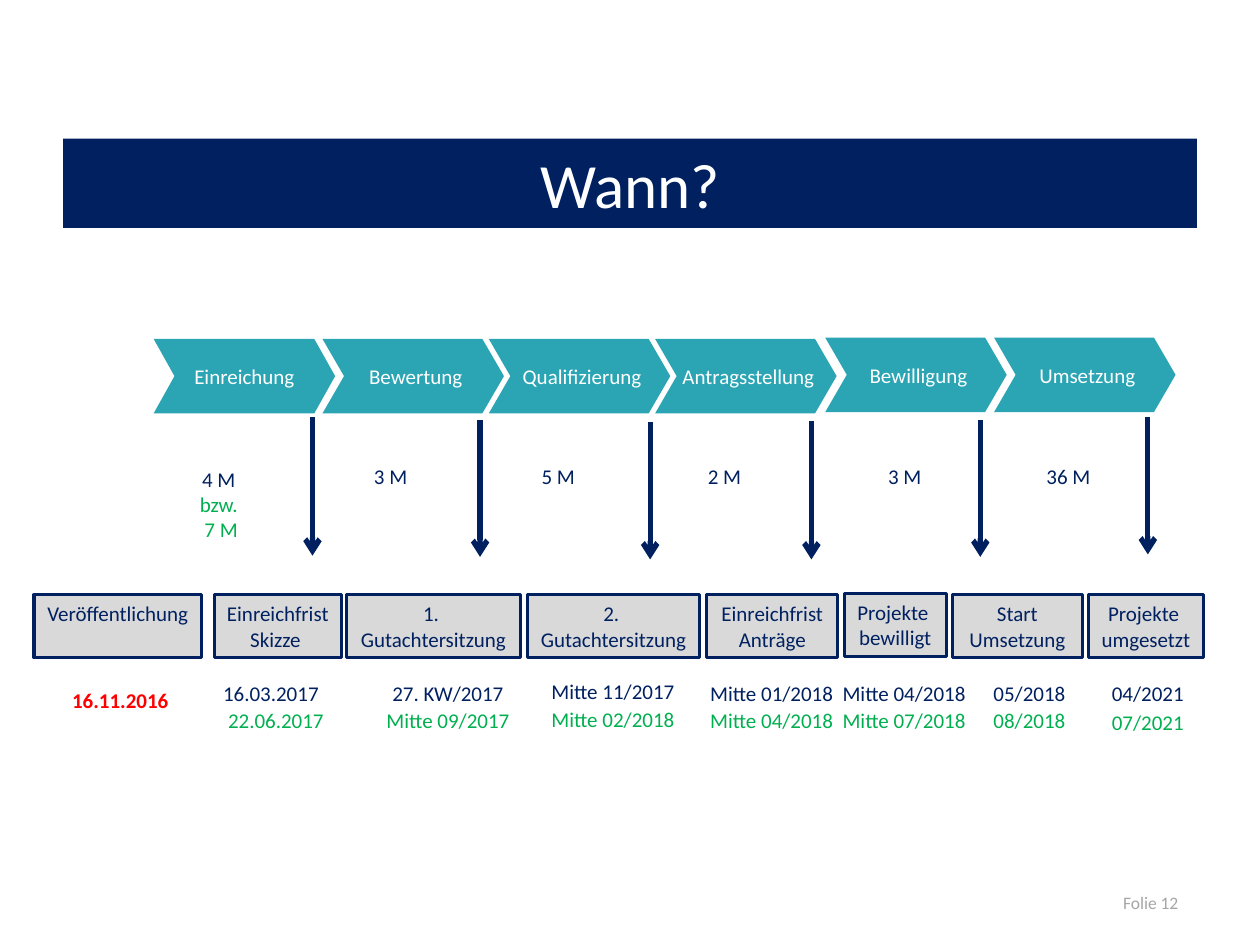
from dataclasses import dataclass

from lxml.etree import SubElement
from pptx import Presentation
from pptx.dml.color import RGBColor
from pptx.enum.shapes import MSO_CONNECTOR as Conn, MSO_SHAPE as Shape
from pptx.enum.text import MSO_ANCHOR as Anchor, PP_ALIGN as Align
from pptx.oxml.ns import qn
from pptx.util import Pt

EMU_PER_PX = 9144
FONT = "Calibri"
NAVY = RGBColor(0x00, 0x20, 0x60)
TEAL = RGBColor(0x2B, 0xA4, 0xB4)
GREEN = RGBColor(0x00, 0xB0, 0x50)
RED = RGBColor(0xFF, 0x00, 0x00)
WHITE = RGBColor(0xFF, 0xFF, 0xFF)
LIGHT_GREY = RGBColor(0xD9, 0xD9, 0xD9)
MID_GREY = RGBColor(0xA6, 0xA6, 0xA6)


@dataclass
class Phase:
    name: str
    left: int
    top: int
    duration: str
    duration_left: int
    arrow_x: int
    arrow_top: int
    arrow_bottom: int


@dataclass
class Milestone:
    name: str
    left: int
    width: int
    date: str
    later_date: str
    date_left: int
    date_width: int
    top: int = 472
    date_top: int = 535
    later_top: int = 557
    later_width: int = 0


PHASES = [
    Phase("Einreichung", 122, 269, "", 0, 248, 331, 441),
    Phase("Bewertung", 256, 269, "3 M", 276, 381, 333, 442),
    Phase("Qualifizierung", 388, 269, "5 M", 409, 516, 335, 444),
    Phase("Antragsstellung", 520, 269, "2 M", 541, 644, 334, 444),
    Phase("Bewilligung", 655, 268, "3 M", 684, 778, 333, 442),
    Phase("Umsetzung", 789, 268, "36 M", 814, 911, 331, 440),
]
MILESTONES = [
    Milestone("Einreichfrist\nSkizze ", 170, 101, "16.03.2017", "22.06.2017",
              154, 122, later_width=130),
    Milestone("1. \vGutachtersitzung", 275, 138, "27. KW/2017", "Mitte 09/2017", 296, 119),
    Milestone("2. \nGutachtersitzung", 419, 136, "Mitte 11/2017", "Mitte 02/2018",
              420, 133, date_top=534, later_top=556),
    Milestone("Einreichfrist\nAnträge", 561, 104, "Mitte 01/2018", "Mitte 04/2018", 546, 133),
    Milestone("Projekte \nbewilligt", 670, 81, "Mitte 04/2018", "Mitte 07/2018",
              658, 119, top=471),
    Milestone("Start Umsetzung", 756, 103, "05/2018", "08/2018", 774, 86),
    Milestone("Projekte \numgesetzt", 864, 91, "04/2021", "07/2021", 867, 88, later_top=558),
]


def px(n: int) -> int:
    return n * EMU_PER_PX


def write(s, text: str, *, size=12, color=NAVY, bold=False, align=Align.CENTER,
          anchor=Anchor.TOP, colors=()) -> None:
    tf = s.text_frame
    tf.word_wrap = True
    tf.vertical_anchor = anchor
    tf.text = text
    for i, p in enumerate(tf.paragraphs):
        p.alignment = align
        for r in p.runs:
            r.font.name = FONT
            r.font.size = Pt(size)
            r.font.bold = bold
            r.font.color.rgb = colors[i] if colors else color


def add_label(sp, text: str, left: int, top: int, width: int, height: int = 30, **fmt) -> None:
    write(sp.add_textbox(px(left), px(top), px(width), px(height)), text, **fmt)


def add_phase(sp, phase: Phase, first: bool) -> None:
    s = sp.add_shape(Shape.CHEVRON, px(phase.left), px(phase.top), px(144), px(59))
    s.shadow.inherit = False
    s.adjustments[0] = 0.28 if first else 0.29
    s.fill.solid()
    s.fill.fore_color.rgb = TEAL
    s.line.fill.background()
    s.text_frame.margin_left = px(0 if first else 4)
    s.text_frame.margin_right = 0
    write(s, phase.name, color=WHITE, anchor=Anchor.MIDDLE)


def add_arrow(sp, x: int, top: int, bottom: int) -> None:
    s = sp.add_connector(Conn.STRAIGHT, px(x), px(top), px(x), px(bottom))
    s.line.color.rgb = NAVY
    s.line.width = Pt(3)
    SubElement(s.line._get_or_add_ln(), qn("a:tailEnd"), type="arrow")
    SubElement(s._element.spPr, qn("a:effectLst"))


def add_box(sp, text: str, left: int, top: int, width: int) -> None:
    s = sp.add_shape(Shape.RECTANGLE, px(left), px(top), px(width), px(50))
    s.shadow.inherit = False
    s.fill.solid()
    s.fill.fore_color.rgb = LIGHT_GREY
    s.line.color.rgb = NAVY
    s.line.width = Pt(1.75)
    write(s, text)


def add_milestone(sp, m: Milestone) -> None:
    add_box(sp, m.name, m.left, m.top, m.width)
    add_label(sp, m.date, m.date_left, m.date_top, m.date_width)
    add_label(sp, m.later_date, m.date_left, m.later_top,
              m.later_width or m.date_width, color=GREEN)


def format_title(s) -> None:
    s.left, s.top, s.width, s.height = px(50), px(110), px(900), px(71)
    geom = SubElement(s._element.spPr, qn("a:prstGeom"), prst="wedgeRoundRectCallout")
    guides = SubElement(geom, qn("a:avLst"))
    for i, value in enumerate((15200, 14200, 16667), 1):
        SubElement(guides, qn("a:gd"), name=f"adj{i}", fmla=f"val {value}")
    s.fill.solid()
    s.fill.fore_color.rgb = NAVY
    write(s, "Wann?", size=36, color=WHITE, anchor=Anchor.MIDDLE)


def main() -> None:
    prs = Presentation()
    prs.slide_width, prs.slide_height = px(1000), px(750)
    slide = prs.slides.add_slide(prs.slide_layouts[5])
    sp = slide.shapes
    format_title(sp.title)
    for i, phase in enumerate(PHASES):
        add_phase(sp, phase, first=i == 0)
        add_arrow(sp, phase.arrow_x, phase.arrow_top, phase.arrow_bottom)
        if phase.duration:
            add_label(sp, phase.duration, phase.duration_left, 363, 68)
    add_label(sp, "4 M \nbzw. \n7 M", 116, 365, 119, 71, colors=(NAVY, GREEN, GREEN))
    add_box(sp, "Veröffentlichung", 27, 472, 133)
    add_label(sp, "16.11.2016", 36, 541, 119, color=RED, bold=True)
    for m in MILESTONES:
        add_milestone(sp, m)
    add_label(sp, "Folie 12", 837, 703, 108, 27, size=10, color=MID_GREY, align=Align.RIGHT)
    prs.save("out.pptx")


if __name__ == "__main__":
    main()
